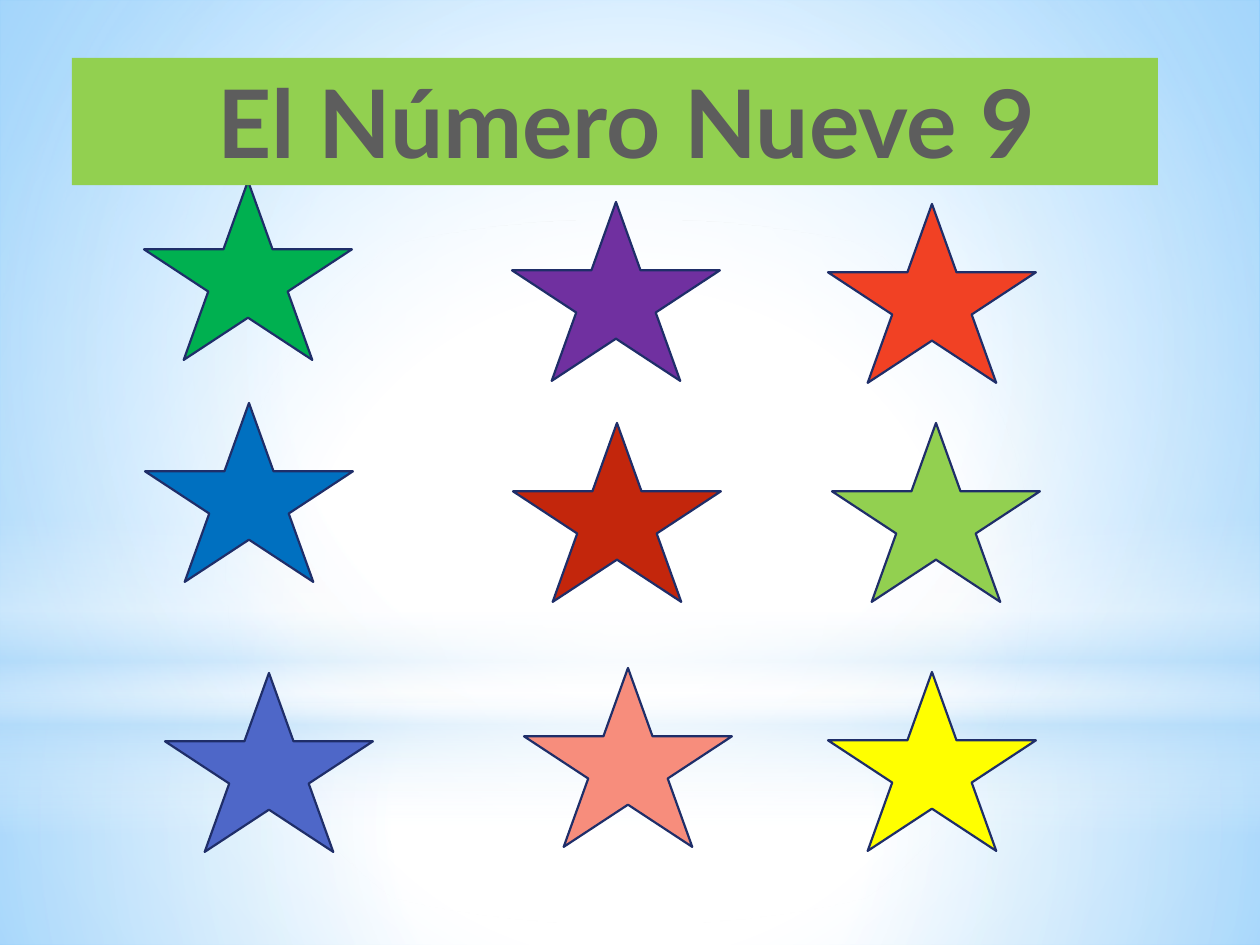
from lxml import etree
from pptx import Presentation
from pptx import util as u
from pptx.dml.color import RGBColor
from pptx.enum import shapes, text
from pptx.oxml import ns

WHITE = RGBColor(0xFF, 0xFF, 0xFF)
SKY = RGBColor(0x63, 0xBC, 0xFF)
PALE = RGBColor(0xB4, 0xDC, 0xFA)
LIME = RGBColor(0x92, 0xD0, 0x50)
GRAY = RGBColor(0x5D, 0x5D, 0x5D)
NAVY = RGBColor(0x1F, 0x2E, 0x69)
GREEN = RGBColor(0x00, 0xB0, 0x50)
PURPLE = RGBColor(0x70, 0x30, 0xA0)
ORANGE = RGBColor(0xF1, 0x41, 0x24)
BLUE = RGBColor(0x00, 0x70, 0xC0)
RED = RGBColor(0xC3, 0x26, 0x0C)
INDIGO = RGBColor(0x4E, 0x67, 0xC8)
SALMON = RGBColor(0xF7, 0x8D, 0x7C)
YELLOW = RGBColor(0xFF, 0xFF, 0x00)

PX = u.Inches(1) / 126
WIDTH, HEIGHT = 1260, 945
STAR_SIZE = 208, 179
CENTER = 50, 50, 50, 50
STARS = [
    (72, 123, GREEN), (440, 144, PURPLE), (756, 146, ORANGE),
    (73, 345, BLUE), (441, 365, RED), (760, 365, LIME),
    (93, 615, INDIGO), (452, 610, SALMON), (756, 614, YELLOW),
]


def emu(*lengths):
    """Turn px lengths into EMU."""
    return [u.Emu(round(n * PX)) for n in lengths]


def set_gradient(fill, owner, stops, focus=None):
    """Fill the owner with (position, colour, opacity) stops, radial if a focus is given."""
    fill.solid()
    solid = owner.xpath(".//a:solidFill")[0]
    grad = etree.Element(ns.qn("a:gradFill"), rotWithShape="1")
    stop_list = etree.SubElement(grad, ns.qn("a:gsLst"))
    for position, color, opacity in stops:
        stop = etree.SubElement(stop_list, ns.qn("a:gs"), pos=str(position * 1000))
        srgb = etree.SubElement(stop, ns.qn("a:srgbClr"), val=str(color))
        if opacity < 100:
            etree.SubElement(srgb, ns.qn("a:alpha"), val=str(opacity * 1000))
    if focus:
        radial = etree.SubElement(grad, ns.qn("a:path"), path="circle")
        sides = {side: str(n * 1000) for side, n in zip("ltrb", focus)}
        etree.SubElement(radial, ns.qn("a:fillToRect"), sides)
    else:
        etree.SubElement(grad, ns.qn("a:lin"), ang="5400000", scaled="0")
    solid.getparent().replace(solid, grad)


def add_glow(s, kind, box, stops, focus=None):
    """Add one translucent layer of the backdrop."""
    sp = s.shapes.add_shape(kind, *emu(*box))
    sp.shadow.inherit = False
    set_gradient(sp.fill, sp.element.spPr, stops, focus)
    sp.line.fill.background()


def add_backdrop(s, box):
    """Paint the sky, the horizon band and the central glow."""
    x, y, w, h = box
    horizon = 703
    rect, oval = shapes.MSO_SHAPE.RECTANGLE, shapes.MSO_SHAPE.OVAL
    set_gradient(s.background.fill, s.element.xpath(".//p:bgPr")[0],
                 [(0, WHITE, 100), (42, WHITE, 100), (100, SKY, 100)], (24, 44, 24, 12))
    add_glow(s, rect, (x, y + horizon, w, h - horizon),
             [(0, WHITE, 91), (37, WHITE, 76), (100, PALE, 79)], CENTER)
    add_glow(s, rect, (x, y, w, horizon),
             [(0, WHITE, 89), (48, WHITE, 62), (100, PALE, 79)], CENTER)
    add_glow(s, rect, (x, y + 519, w, 315),
             [(0, WHITE, 0), (29, WHITE, 30), (45, PALE, 40),
              (55, WHITE, 26), (65, PALE, 60), (100, WHITE, 0)])
    add_glow(s, oval, (x, y + 220, w, horizon),
             [(0, WHITE, 100), (56, WHITE, 0)], CENTER)


def add_stars(s, box):
    """Add the nine stars to count."""
    x, y = box[:2]
    for left, top, color in STARS:
        sp = s.shapes.add_shape(shapes.MSO_SHAPE.STAR_5_POINT,
                                *emu(x + left, y + top, *STAR_SIZE))
        sp.shadow.inherit = False
        sp.fill.solid()
        sp.fill.fore_color.rgb = color
        sp.line.color.rgb = NAVY
        sp.line.width = u.Pt(1.25)


def set_title(s, box):
    """Place the title banner in front of the stars."""
    sp = s.shapes.title
    sp.left, sp.top, sp.width, sp.height = emu(*box)
    sp.fill.solid()
    sp.fill.fore_color.rgb = LIME
    tf = sp.text_frame
    tf.text = " El Número Nueve 9"
    tf.word_wrap = False
    tf.auto_size = text.MSO_AUTO_SIZE.SHAPE_TO_FIT_TEXT
    tf.vertical_anchor = text.MSO_ANCHOR.TOP
    p = tf.paragraphs[0]
    p.alignment = text.PP_ALIGN.CENTER
    font = p.runs[0].font
    font.name, font.size, font.bold = "Lato", u.Pt(54), True
    font.color.rgb = GRAY
    s.shapes.element.append(sp.element)


def main():
    """Build the counting slide and save it."""
    prs = Presentation()
    prs.slide_width, prs.slide_height = emu(WIDTH, HEIGHT)
    s = prs.slides.add_slide(prs.slide_layouts[5])
    add_backdrop(s, (0, 0, WIDTH, HEIGHT))
    add_stars(s, (72, 58, 1086, 830))
    set_title(s, (72, 58, 1086, 127))
    prs.save("out.pptx")


if __name__ == "__main__":
    main()
